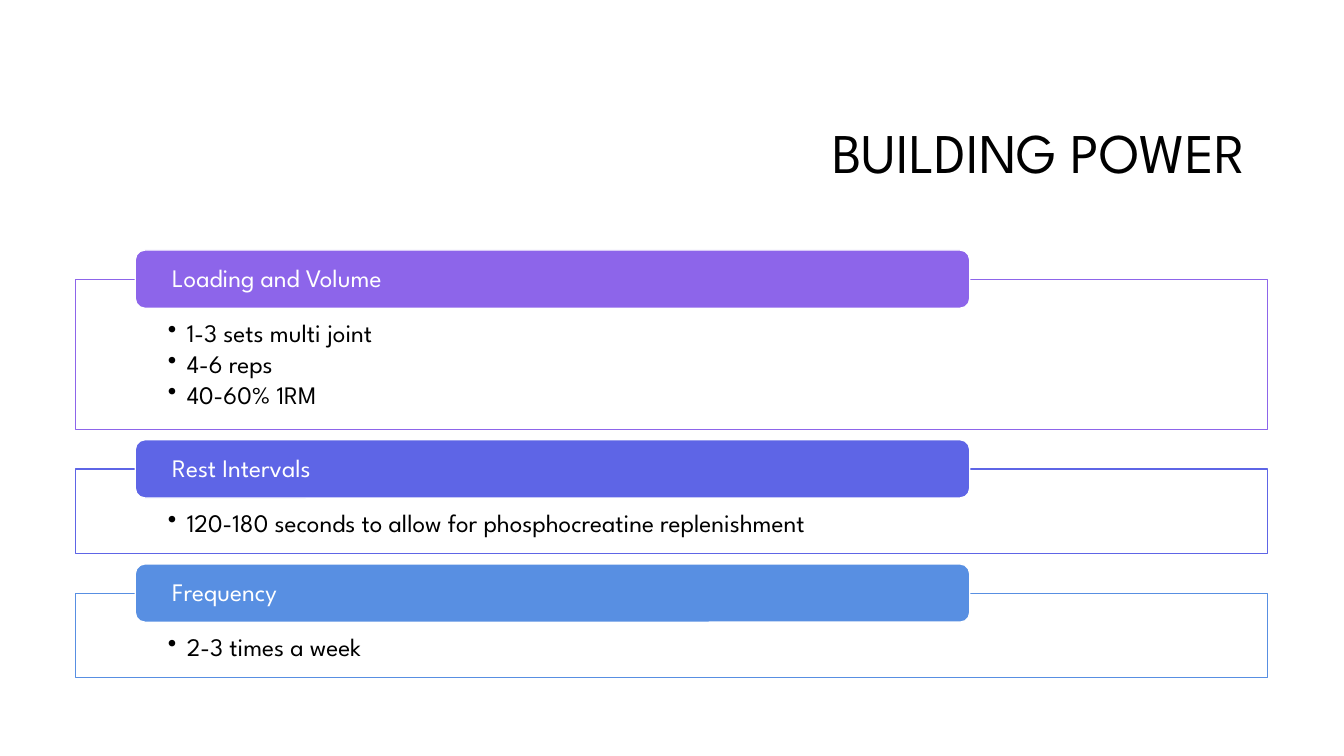
from lxml.etree import SubElement
from pptx import Presentation
from pptx.dml.color import RGBColor
from pptx.enum.shapes import MSO_SHAPE as SHAPE
from pptx.enum.text import MSO_ANCHOR as ANCHOR, PP_ALIGN as ALIGN
from pptx.oxml.ns import qn
from pptx.util import Cm, Pt

COLORS = {
    "black": "000000",
    "white": "FFFFFF",
    "purple": "8D65EA",
    "indigo": "5E65E6",
    "blue": "588FE2",
}
SECTIONS = [
    ("Loading and Volume", "purple", 3.78,
     ["1-3 sets multi joint", "4-6 reps", "40-60% 1RM"]),
    ("Rest Intervals", "indigo", 2.13,
     ["120-180 seconds to allow for phosphocreatine replenishment"]),
    ("Frequency", "blue", 2.13, ["2-3 times a week"]),
]


def write(shape, lines, size=18, color="black", align=ALIGN.LEFT,
          anchor=ANCHOR.MIDDLE, insets=(0.25, 0.13, 0.25, 0.13),
          after=0, bullet=False):
    frame = shape.text_frame
    frame.word_wrap = True
    frame.vertical_anchor = anchor
    (frame.margin_left, frame.margin_top,
     frame.margin_right, frame.margin_bottom) = map(Cm, insets)
    for i, line in enumerate(lines):
        paragraph = frame.paragraphs[0] if i == 0 else frame.add_paragraph()
        paragraph.alignment = align
        paragraph.line_spacing = 0.9
        paragraph.space_after = Pt(after)
        if bullet:
            props = paragraph._p.get_or_add_pPr()
            props.set("marL", str(Cm(0.48)))
            props.set("indent", str(-Cm(0.48)))
            SubElement(props, qn("a:buChar")).set("char", "•")
        run = paragraph.add_run()
        run.text = line
        run.font.name = "League Spartan"
        run.font.size = Pt(size)
        run.font.color.rgb = RGBColor.from_string(COLORS[color])


def add_panel(kind, left, top, width, height, fill, line):
    panel = slide.shapes.add_shape(kind, Cm(left), Cm(top), Cm(width), Cm(height))
    panel.shadow.inherit = False
    panel.fill.solid()
    panel.fill.fore_color.rgb = RGBColor.from_string(COLORS[fill])
    panel.line.color.rgb = RGBColor.from_string(COLORS[line])
    panel.line.width = Pt(1)
    return panel


prs = Presentation()
prs.slide_width, prs.slide_height = Cm(33.87), Cm(19.05)
slide = prs.slides.add_slide(prs.slide_layouts[6])

title = slide.shapes.add_textbox(Cm(8.05), Cm(2.13), Cm(23.93), Cm(3.58))
write(title, ["BUILDING POWER "], size=40, align=ALIGN.RIGHT)

top = 7.04
for heading, color, height, points in SECTIONS:
    details = add_panel(SHAPE.RECTANGLE, 1.9, top, 30.05, height, "white", color)
    write(details, points, anchor=ANCHOR.TOP, insets=(2.33, 1.04, 2.33, 0.36),
          after=2.7, bullet=True)
    banner = add_panel(SHAPE.ROUNDED_RECTANGLE, 3.41, top - 0.74, 21.03, 1.47,
                       color, "white")
    write(banner, [heading], color="white", insets=(0.86, 0, 0.86, 0))
    top += height + 1

prs.save("out.pptx")
